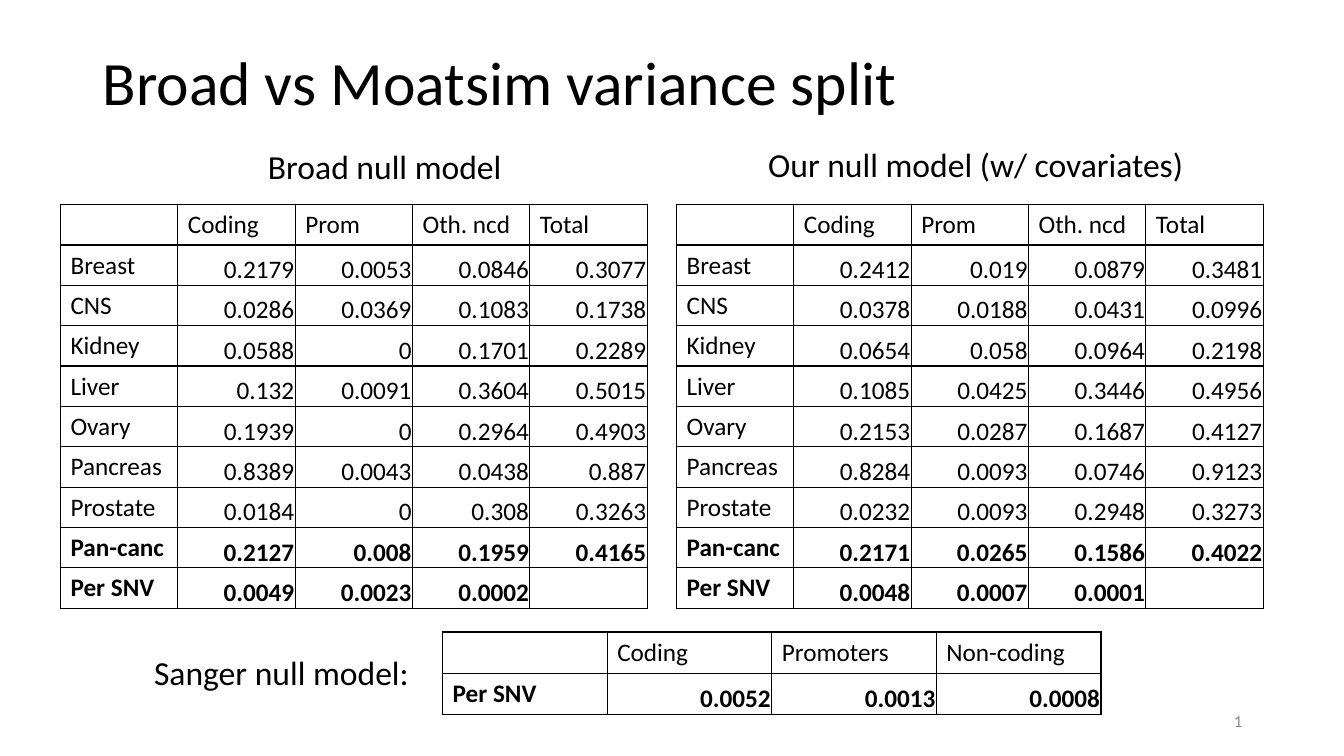
from lxml.etree import SubElement
from pptx import Presentation
from pptx.dml.color import RGBColor as RGB
from pptx.enum.text import MSO_ANCHOR as ANCHOR, PP_ALIGN as ALIGN
from pptx.oxml.ns import qn
from pptx.util import Inches, Pt

COLORS = {"ink": "000000", "page": "8C8C8C"}
FONT = "Calibri"
W, H = 13.33, 7.5

HEADER = ["", "Coding", "Prom", "Oth. ncd", "Total"]
BROAD = [
    HEADER,
    ["Breast", "0.2179", "0.0053", "0.0846", "0.3077"],
    ["CNS", "0.0286", "0.0369", "0.1083", "0.1738"],
    ["Kidney", "0.0588", "0", "0.1701", "0.2289"],
    ["Liver", "0.132", "0.0091", "0.3604", "0.5015"],
    ["Ovary", "0.1939", "0", "0.2964", "0.4903"],
    ["Pancreas", "0.8389", "0.0043", "0.0438", "0.887"],
    ["Prostate", "0.0184", "0", "0.308", "0.3263"],
    ["Pan-canc", "0.2127", "0.008", "0.1959", "0.4165"],
    ["Per SNV", "0.0049", "0.0023", "0.0002", ""],
]
OURS = [
    HEADER,
    ["Breast", "0.2412", "0.019", "0.0879", "0.3481"],
    ["CNS", "0.0378", "0.0188", "0.0431", "0.0996"],
    ["Kidney", "0.0654", "0.058", "0.0964", "0.2198"],
    ["Liver", "0.1085", "0.0425", "0.3446", "0.4956"],
    ["Ovary", "0.2153", "0.0287", "0.1687", "0.4127"],
    ["Pancreas", "0.8284", "0.0093", "0.0746", "0.9123"],
    ["Prostate", "0.0232", "0.0093", "0.2948", "0.3273"],
    ["Pan-canc", "0.2171", "0.0265", "0.1586", "0.4022"],
    ["Per SNV", "0.0048", "0.0007", "0.0001", ""],
]
SANGER = [
    ["", "Coding", "Promoters", "Non-coding"],
    ["Per SNV", "0.0052", "0.0013", "0.0008"],
]
BOLD_ROWS = {"Pan-canc", "Per SNV"}

TABLES = [
    (BROAD, 0.6, 2.03, 5.82, 0.4),
    (OURS, 6.71, 2.03, 5.82, 0.4),
    (SANGER, 4.39, 6.27, 6.53, 0.41),
]
LABELS = [
    ("Broad vs Moatsim variance split", (0.92, 0.12, 11.5, 1.45), 44, "ink",
     ANCHOR.MIDDLE, {"line_spacing": 0.9}),
    ("Broad null model", (2.56, 1.4, 2.64, 0.5), 24, "ink", ANCHOR.TOP, {}),
    ("Our null model (w/ covariates)", (7.52, 1.38, 4.52, 0.5), 24, "ink", ANCHOR.TOP, {}),
    ("Sanger null model:", (1.43, 6.42, 2.96, 0.5), 24, "ink", ANCHOR.TOP, {}),
    ("1", (9.42, 6.95, 3, 0.4), 12, "page", ANCHOR.MIDDLE, {"alignment": ALIGN.RIGHT}),
]
NUMBER_CELL = {
    "vertical_anchor": ANCHOR.BOTTOM,
    "margin_left": Inches(0.01),
    "margin_right": Inches(0.01),
    "margin_top": Inches(0.01),
    "margin_bottom": 0,
}


def apply(target, values):
    for name, value in values.items():
        setattr(target, name, value)


def write(p, text, size, color="ink", bold=False):
    r = p.add_run()
    r.text = text
    apply(r.font, {"name": FONT, "size": Pt(size), "bold": bold})
    r.font.color.rgb = RGB.from_string(COLORS[color])


def add_borders(cell):
    tc_pr = cell._tc.get_or_add_tcPr()
    for side in ("a:lnL", "a:lnR", "a:lnT", "a:lnB"):
        ln = SubElement(tc_pr, qn(side), w=str(Pt(1)))
        fill = SubElement(ln, qn("a:solidFill"))
        SubElement(fill, qn("a:srgbClr"), val=COLORS["ink"])


def add_grid(s, rows, left, top, width, row_height):
    n_rows, n_cols = len(rows), len(rows[0])
    table = s.shapes.add_table(n_rows, n_cols, Inches(left), Inches(top),
                               Inches(width), Inches(row_height * n_rows)).table
    apply(table, {"first_row": False, "horz_banding": False})
    for i, row in enumerate(rows):
        for j, text in enumerate(row):
            cell = table.cell(i, j)
            add_borders(cell)
            cell.fill.background()
            if not text:
                continue
            p = cell.text_frame.paragraphs[0]
            if i and j:
                apply(cell, NUMBER_CELL)
                p.alignment = ALIGN.RIGHT
            write(p, text, 18, bold=row[0] in BOLD_ROWS)


def add_label(s, text, box, size, color, anchor, layout):
    tf = s.shapes.add_textbox(*map(Inches, box)).text_frame
    apply(tf, {"word_wrap": True, "vertical_anchor": anchor})
    p = tf.paragraphs[0]
    apply(p, layout)
    write(p, text, size, color)


def main():
    prs = Presentation()
    prs.slide_width, prs.slide_height = Inches(W), Inches(H)
    s = prs.slides.add_slide(prs.slide_layouts[6])
    for label in LABELS:
        add_label(s, *label)
    for grid in TABLES:
        add_grid(s, *grid)
    prs.save("out.pptx")


if __name__ == "__main__":
    main()
